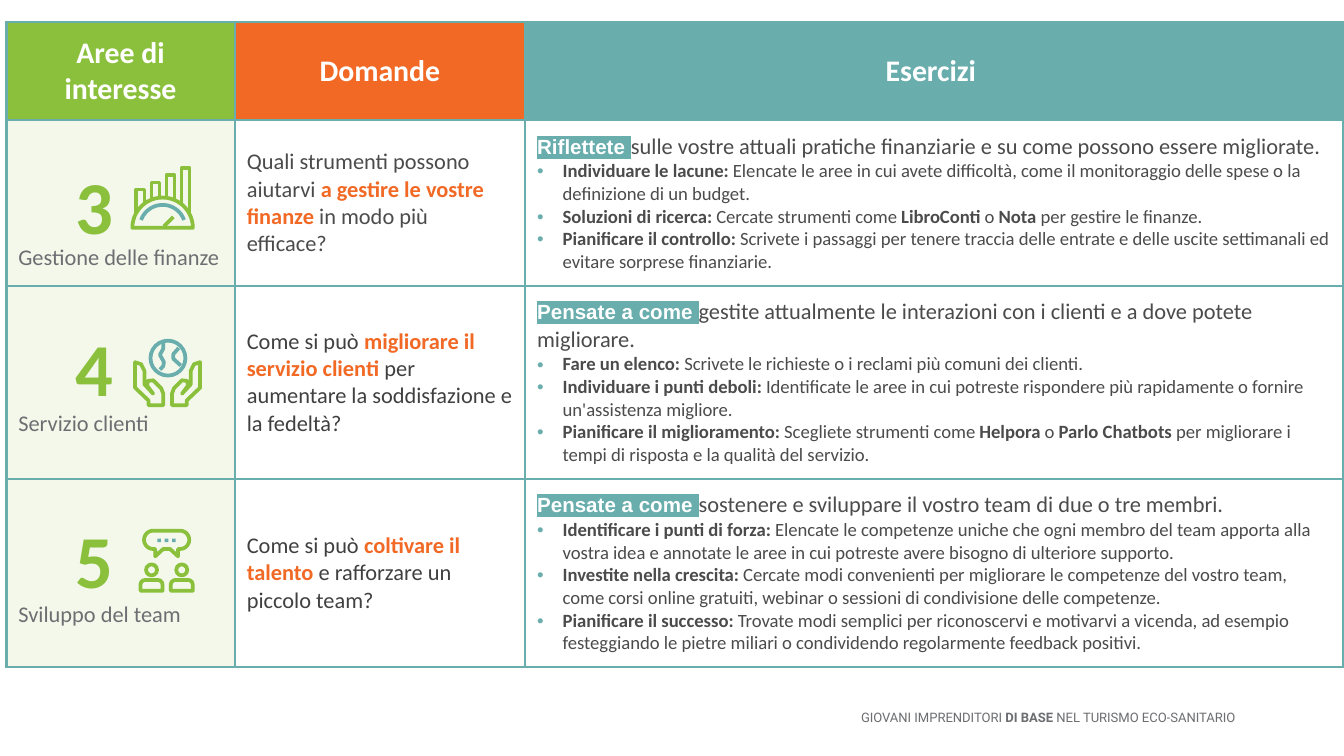
"""Build a slide with a table of interest areas, questions and exercises."""
from math import cos, radians, sin, sqrt

from lxml import etree
from pptx import Presentation
from pptx.dml.color import RGBColor
from pptx.enum.shapes import MSO_SHAPE
from pptx.enum.text import MSO_ANCHOR, PP_ALIGN
from pptx.oxml.ns import qn
from pptx.util import Inches, Pt

OVAL, RECTANGLE, SHOULDERS = MSO_SHAPE.OVAL, MSO_SHAPE.RECTANGLE, MSO_SHAPE.ROUND_2_SAME_RECTANGLE
MIDDLE, BOTTOM = MSO_ANCHOR.MIDDLE, MSO_ANCHOR.BOTTOM
LEFT, CENTER, RIGHT = PP_ALIGN.LEFT, PP_ALIGN.CENTER, PP_ALIGN.RIGHT

GREEN = RGBColor(0x8A, 0xC0, 0x3B)
ORANGE = RGBColor(0xF1, 0x69, 0x24)
TEAL = RGBColor(0x69, 0xAD, 0xAD)
WHITE = RGBColor(0xFF, 0xFF, 0xFF)
GREY = RGBColor(0x6D, 0x6E, 0x71)
DARK = RGBColor(0x4B, 0x4B, 0x4B)
CHARCOAL = RGBColor(0x40, 0x40, 0x40)

COLUMNS = [17, 21.6, 60.9]
ROWS = [7.3, 12.35, 14.35, 14]
HEADERS = [("Aree di interesse", GREEN), ("Domande", ORANGE), ("Esercizi ", TEAL)]
AREAS = [
    ("3", 12.3, "Gestione delle finanze", 1.1, DARK,
     "Quali strumenti possono aiutarvi **a gestire le vostre finanze **in modo più efficace?",
     "Riflettete ",
     "sulle vostre attuali pratiche finanziarie e su come possono essere migliorate.",
     ["**Individuare le lacune: **Elencate le aree in cui avete difficoltà, come il monitoraggio "
      "delle spese o la definizione di un budget.",
      "**Soluzioni di ricerca: **Cercate strumenti come **LibroConti **o **Nota **per gestire le finanze.",
      "**Pianificare il controllo: **Scrivete i passaggi per tenere traccia delle entrate e delle "
      "uscite settimanali ed evitare sorprese finanziarie."]),
    ("4", 24.4, "Servizio clienti", 3.1, CHARCOAL,
     "Come si può **migliorare il servizio clienti **per aumentare la soddisfazione e la fedeltà?",
     "Pensate a come ",
     "gestite attualmente le interazioni con i clienti e a dove potete migliorare.",
     ["**Fare un elenco: **Scrivete le richieste o i reclami più comuni dei clienti.",
      "**Individuare i punti deboli: **Identificate le aree in cui potreste rispondere più "
      "rapidamente o fornire un'assistenza migliore.",
      "**Pianificare il miglioramento: **Scegliete strumenti come **Helpora **o **Parlo Chatbots "
      "**per migliorare i tempi di risposta e la qualità del servizio."]),
    ("5", 38.7, "Sviluppo del team", 2.9, CHARCOAL,
     "Come si può **coltivare il talento **e rafforzare un piccolo team?",
     "Pensate a come ",
     "sostenere e sviluppare il vostro team di due o tre membri.",
     ["**Identificare i punti di forza: **Elencate le competenze uniche che ogni membro del team "
      "apporta alla vostra idea e annotate le aree in cui potreste avere bisogno di ulteriore supporto.",
      "**Investite nella crescita: **Cercate modi convenienti per migliorare le competenze del vostro "
      "team, come corsi online gratuiti, webinar o sessioni di condivisione delle competenze.",
      "**Pianificare il successo: **Trovate modi semplici per riconoscervi e motivarvi a vicenda, ad "
      "esempio festeggiando le pietre miliari o condividendo regolarmente feedback positivi."]),
]


def grid(value):
    """Turn grid units, a hundredth of the slide width each, into a length."""
    return Inches(value / 10)


def add_color(parent, tag, color):
    """Append a colour element under the given tag."""
    element = etree.SubElement(parent, qn(tag))
    etree.SubElement(element, qn("a:srgbClr"), val=str(color))
    return element


def write(paragraph, text, size=12, color=DARK, strong=None, bold=False,
          font="Calibri", align=LEFT, highlight=None):
    """Add runs to a paragraph, with bold parts between double asterisks."""
    paragraph.alignment = align
    for index, part in enumerate(text.split("**")):
        if not part:
            continue
        marked = index % 2 == 1
        run = paragraph.add_run()
        run.text = part
        run.font.size = Pt(size)
        run.font.bold = bold or marked
        run.font.color.rgb = strong if marked and strong else color
        if highlight:
            add_color(run.font._element, "a:highlight", highlight)
        run.font.name = font


def arc(x, y, radius, start, end):
    """List points on a circle between two angles in degrees."""
    angles = [radians(start + (end - start) * step / 24) for step in range(25)]
    return [(x + radius * cos(angle), y - radius * sin(angle)) for angle in angles]


class SlideBuilder:
    """Hold the style and the current slide."""

    stroke = Pt(2)
    border = Pt(1.5)

    def __init__(self, slide):
        """Keep the slide to draw on."""
        self.slide = slide

    def text(self, left, top, width, height, text, **style):
        """Add a text box centred vertically."""
        box = self.slide.shapes.add_textbox(*map(grid, (left, top, width, height)))
        box.text_frame.word_wrap = True
        box.text_frame.vertical_anchor = MIDDLE
        write(box.text_frame.paragraphs[0], text, **style)

    def table(self, left, top, columns, rows):
        """Add a plain table with the given column and row sizes."""
        frame = self.slide.shapes.add_table(len(rows), len(columns), *map(
            grid, (left, top, sum(columns), sum(rows))))
        table = frame.table
        table.first_row = table.horz_banding = False
        for column, width in zip(table.columns, columns):
            column.width = grid(width)
        for row, height in zip(table.rows, rows):
            row.height = grid(height)
        return table

    def cell(self, cell, fill, alpha=None, anchor=MIDDLE, bottom=0.9):
        """Style a cell and return its first paragraph."""
        cell.margin_left = cell.margin_right = cell.margin_top = grid(0.9)
        cell.margin_bottom = grid(bottom)
        cell.vertical_anchor = anchor
        properties = cell._tc.get_or_add_tcPr()
        for side in "LRTB":
            line = etree.SubElement(properties, qn(f"a:ln{side}"), w=str(self.border))
            add_color(line, "a:solidFill", TEAL)
        cell.fill.solid()
        cell.fill.fore_color.rgb = fill
        if alpha:
            color = properties.find(qn("a:solidFill")).find(qn("a:srgbClr"))
            etree.SubElement(color, qn("a:alpha"), val=str(alpha * 1000))
        return cell.text_frame.paragraphs[0]

    def bullet(self, cell, text):
        """Append a bulleted paragraph to a cell."""
        paragraph = cell.text_frame.add_paragraph()
        write(paragraph, text, size=10)
        properties = paragraph._p.get_or_add_pPr()
        properties.set("marL", str(grid(1.9)))
        properties.set("indent", str(-grid(1.9)))
        add_color(properties, "a:buClr", TEAL)
        etree.SubElement(properties, qn("a:buFont"), typeface="Arial")
        etree.SubElement(properties, qn("a:buChar"), char="•")

    def outline(self, shape, color):
        """Give a shape a coloured line only."""
        shape.shadow.inherit = False
        shape.fill.background()
        shape.line.color.rgb = color
        shape.line.width = self.stroke

    def stroke_path(self, points, color=GREEN, close=False):
        """Draw a line through points."""
        points = [(grid(x), grid(y)) for x, y in points]
        builder = self.slide.shapes.build_freeform(*points[0])
        builder.add_line_segments(points[1:], close=close)
        self.outline(builder.convert_to_shape(), color)

    def preset(self, kind, left, top, width, height, color=GREEN, filled=False):
        """Draw a preset shape, outlined or filled."""
        shape = self.slide.shapes.add_shape(kind, *map(grid, (left, top, width, height)))
        self.outline(shape, color)
        if filled:
            shape.fill.solid()
            shape.fill.fore_color.rgb = color
            shape.line.fill.background()
        return shape

    def finance_icon(self, x=12.1, y=16.95, radius=2.25):
        """Draw a gauge with rising bars."""
        self.stroke_path(arc(x, y, radius, 0, 180), close=True)
        for index in range(4):
            center, top = 10.45 + 1.12 * index, 14.1 - 0.53 * index
            left, right = center - 0.3, center + 0.3
            feet = [y - sqrt(radius ** 2 - (side - x) ** 2) for side in (left, right)]
            self.stroke_path([(left, feet[0]), (left, top), (right, top), (right, feet[1])])
        self.stroke_path([(12.2, 16.85), (12.9, 16.15)])
        self.stroke_path(arc(x, y, 1.7, 20, 160), TEAL)

    def service_icon(self, axis=12.47):
        """Draw two hands under a globe."""
        hand = [(12.15, 30.15), (11.05, 30.15), (11.05, 29.8), (10.05, 28.85), (10.05, 26.95),
                (10.5, 27.1), (10.75, 27.6), (10.75, 28.6), (11.4, 29.3), (10.95, 28.7),
                (11, 28.35), (11.4, 28.3), (12, 28.9), (12.15, 29.3)]
        self.stroke_path(hand, close=True)
        self.stroke_path([(2 * axis - x, y) for x, y in hand], close=True)
        self.preset(OVAL, 11.2, 25.35, 2.6, 2.6, TEAL)
        self.stroke_path([(12.15, 25.5), (12.15, 25.95), (11.9, 26.4), (12.2, 26.95),
                          (12.15, 27.25), (11.9, 27.5)], TEAL)
        self.stroke_path([(13.3, 25.9), (12.9, 26.35), (12.9, 26.7), (13.45, 27.2)], TEAL)

    def team_icon(self):
        """Draw two people under a speech bubble."""
        for left in (10.45, 12.7):
            self.preset(SHOULDERS, left, 43.15, 1.65, 0.8).adjustments[0] = 0.45
            self.preset(OVAL, left + 0.42, 42, 0.82, 0.82)
        tails = [(11.55, 40.85), (11.55, 41.4), (12.15, 40.85),
                 (12.65, 40.85), (13.25, 41.4), (13.25, 40.85)]
        self.stroke_path(arc(11.4, 40.17, 0.68, 90, 270) + tails
                         + arc(13.4, 40.17, 0.68, -90, 90), close=True)
        for index in range(3):
            self.preset(RECTANGLE, 11.7 + 0.55 * index, 40.08, 0.27, 0.27, TEAL, filled=True)


def main():
    """Build and save the slide."""
    presentation = Presentation()
    presentation.slide_width = Inches(10)
    presentation.slide_height = Inches(10) * 9 // 16
    builder = SlideBuilder(presentation.slides.add_slide(presentation.slide_layouts[6]))
    builder.text(45.8, 51.35, 47.1, 4.1, "GIOVANI IMPRENDITORI **DI BASE **NEL TURISMO ECO-SANITARIO",
                 size=7, color=GREY, font="Roboto", align=RIGHT)
    table = builder.table(0.47, 1.65, COLUMNS, ROWS)
    for column, (title, fill) in enumerate(HEADERS):
        write(builder.cell(table.cell(0, column), fill), title,
              size=16, color=WHITE, bold=True, align=CENTER)
    for row, (number, top, area, bottom, color, question, lead, task, steps) in enumerate(AREAS, 1):
        write(builder.cell(table.cell(row, 0), GREEN, 10, BOTTOM, bottom), area, color=GREY)
        write(builder.cell(table.cell(row, 1), WHITE), question, color=color, strong=ORANGE)
        exercises = table.cell(row, 2)
        paragraph = builder.cell(exercises, WHITE)
        write(paragraph, lead, size=11, color=WHITE, bold=True, font="Arial", highlight=TEAL)
        write(paragraph, task)
        for step in steps:
            builder.bullet(exercises, step)
        builder.text(4.65, top, 4.7, 5.8, number, size=40, color=GREEN, bold=True)
    builder.finance_icon()
    builder.service_icon()
    builder.team_icon()
    presentation.save("out.pptx")


if __name__ == "__main__":
    main()
